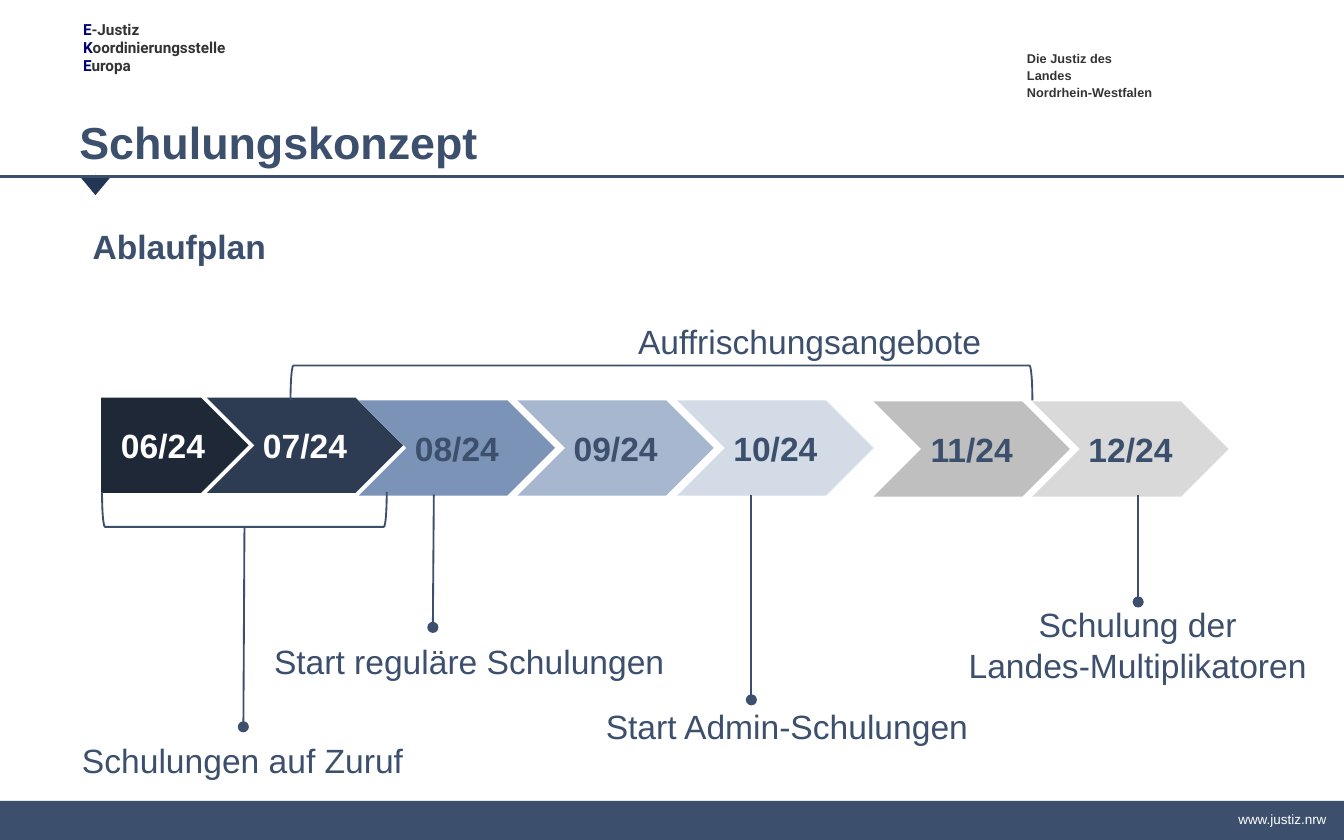
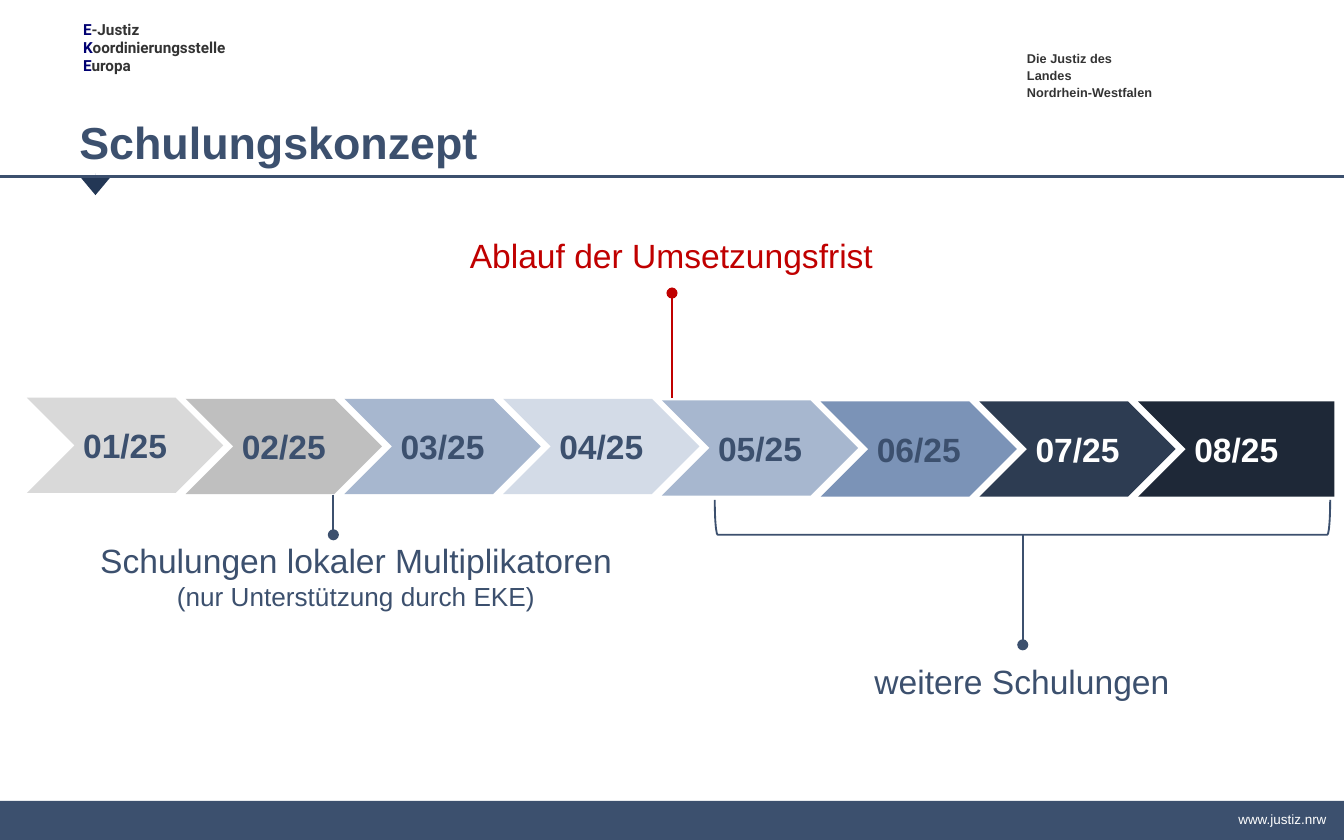
"""Build the two training schedule slides with their month chevrons and callouts."""
from dataclasses import dataclass

import lxml.etree
import pptx
import pptx.dml.color
import pptx.enum.shapes
import pptx.enum.text
import pptx.oxml.ns
import pptx.presentation
import pptx.shapes.base
import pptx.slide
import pptx.text.text
import pptx.util

Cm = pptx.util.Cm
Pt = pptx.util.Pt
Shape = pptx.enum.shapes.MSO_SHAPE
Align = pptx.enum.text.PP_ALIGN
Anchor = pptx.enum.text.MSO_ANCHOR
Slide = pptx.slide.Slide

COLORS = {
    "navy": "3C506E",
    "marker": "233755",
    "initial": "000071",
    "text": "333333",
    "white": "FFFFFF",
    "red": "C00000",
    "night": "1E2837",
    "dark": "2D3C52",
    "blue": "7B93B7",
    "light": "A7B7CF",
    "pale": "D3DBE7",
    "gray": "BFBFBF",
    "silver": "D9D9D9",
}
SLIDE_WIDTH, SLIDE_HEIGHT = 25.4, 15.88
MONTH_WIDTH, MONTH_HEIGHT, MONTH_STEP = 3.71, 1.8, 3.0
BRACKET_DEPTH = 0.66


@dataclass(frozen=True)
class Box:
    left: float
    top: float
    width: float
    height: float = 1.02

    def lengths(self) -> tuple:
        return Cm(self.left), Cm(self.top), Cm(self.width), Cm(self.height)


@dataclass(frozen=True)
class Style:
    size: float = 18
    color: str = "navy"
    bold: bool = False
    align: Align = Align.CENTER
    spacing: float | None = None
    font: str = "Arial"


@dataclass(frozen=True)
class Month:
    text: str
    left: float
    top: float
    color: str
    kind: str = "chevron"


@dataclass(frozen=True)
class Callout:
    start: tuple[float, float]
    end: tuple[float, float]
    color: str = "navy"


@dataclass(frozen=True)
class Bracket:
    left: float
    top: float
    span: float
    rotation: int


@dataclass(frozen=True)
class Label:
    box: Box
    lines: tuple[str, ...]
    styles: tuple[Style, ...] = (Style(),)


PLAIN_LEFT = (Style(align=Align.LEFT),)
HEADING = Style(bold=True, align=Align.JUSTIFY, spacing=16)

MONTHS_2024 = (
    Month("06/24", 1.91, 7.52, "night", "start"),
    Month("07/24", 3.91, 7.52, "dark"),
    Month("08/24", 6.78, 7.57, "blue"),
    Month("09/24", 9.78, 7.57, "light"),
    Month("10/24", 12.8, 7.57, "pale"),
    Month("11/24", 16.51, 7.59, "gray"),
    Month("12/24", 19.51, 7.59, "silver"),
)
ROW_2025 = (
    (7.52, "silver"), (7.54, "gray"), (7.54, "light"), (7.54, "pale"),
    (7.57, "light"), (7.59, "blue"), (7.59, "dark"), (7.59, "night"),
)
MONTHS_2025 = tuple(
    Month(f"{number:02}/25", 0.51 + MONTH_STEP * (number - 1), top, color,
          "end" if number == len(ROW_2025) else "chevron")
    for number, (top, color) in enumerate(ROW_2025, start=1)
)
BRACKETS_2024 = (Bracket(1.93, 9.3, 5.38, 270), Bracket(5.49, 6.91, 14.02, 90))
BRACKETS_2025 = (Bracket(13.51, 9.45, 11.63, 270),)
CALLOUTS_2024 = (
    Callout((8.2, 9.35), (8.18, 11.86)),
    Callout((4.62, 9.96), (4.6, 13.74)),
    Callout((14.2, 9.35), (14.2, 13.23)),
    Callout((21.51, 9.35), (21.51, 11.38)),
)
CALLOUTS_2025 = (
    Callout((12.7, 7.52), (12.7, 5.54), "red"),
    Callout((6.3, 9.35), (6.3, 10.11)),
    Callout((19.33, 10.11), (19.33, 12.19)),
)
LABELS_2024 = (
    Label(Box(1.5, 4.34, 12.7, 0.84), ("Ablaufplan",), (HEADING,)),
    Label(Box(1.3, 13.87, 6.63), ("Schulungen auf Zuruf",), PLAIN_LEFT),
    Label(Box(4.93, 11.99, 7.95), ("Start reguläre Schulungen",), PLAIN_LEFT),
    Label(Box(11.2, 13.23, 7.42), ("Start Admin-Schulungen",), PLAIN_LEFT),
    Label(Box(11.81, 5.94, 7.24), ("Auffrischungsangebote",), PLAIN_LEFT),
    Label(Box(17.93, 11.3, 7.14, 1.8), ("Schulung der", "Landes-Multiplikatoren"),
          (Style(), Style())),
)
LABELS_2025 = (
    Label(Box(1.6, 10.08, 10.26, 1.63),
          ("Schulungen lokaler Multiplikatoren", "(nur Unterstützung durch EKE)"),
          (Style(), Style(size=14))),
    Label(Box(8.59, 4.32, 8.2), ("Ablauf der Umsetzungsfrist",), (Style(color="red"),)),
    Label(Box(16.18, 12.37, 6.27), ("weitere Schulungen",)),
)


def rgb(name: str) -> pptx.dml.color.RGBColor:
    return pptx.dml.color.RGBColor.from_string(COLORS[name])


def format_paragraph(paragraph: pptx.text.text._Paragraph, style: Style) -> None:
    paragraph.alignment = style.align
    if style.spacing:
        paragraph.line_spacing = Pt(style.spacing)
    paragraph.font.name = style.font
    paragraph.font.size = Pt(style.size)
    paragraph.font.bold = style.bold
    paragraph.font.color.rgb = rgb(style.color)


def set_frame(frame: pptx.text.text.TextFrame, anchor: Anchor, wrap: bool = True) -> None:
    frame.margin_left = frame.margin_top = frame.margin_right = frame.margin_bottom = 0
    frame.vertical_anchor = anchor
    frame.word_wrap = wrap


def fill_shape(shape: pptx.shapes.base.BaseShape, color: str) -> None:
    shape.shadow.inherit = False
    shape.fill.solid()
    shape.fill.fore_color.rgb = rgb(color)
    shape.line.fill.background()


def add_label(slide: Slide, label: Label) -> pptx.text.text.TextFrame:
    frame = slide.shapes.add_textbox(*label.box.lengths()).text_frame
    frame.word_wrap = label.styles[0].align == Align.JUSTIFY
    frame.text = "\n".join(label.lines)
    for paragraph, style in zip(frame.paragraphs, label.styles):
        format_paragraph(paragraph, style)
    return frame


def add_line(slide: Slide, line: Callout, width: float = 1, dot: bool = True) -> None:
    connector = slide.shapes.add_connector(
        pptx.enum.shapes.MSO_CONNECTOR.STRAIGHT,
        *(Cm(value) for value in line.start + line.end))
    connector.line.color.rgb = rgb(line.color)
    connector.line.width = Pt(width)
    properties = connector.element.spPr
    qn = pptx.oxml.ns.qn
    if dot:
        lxml.etree.SubElement(properties.find(qn("a:ln")), qn("a:tailEnd"), type="oval")
    lxml.etree.SubElement(properties, qn("a:effectLst"))


def add_bracket(slide: Slide, bracket: Bracket) -> None:
    left = bracket.left + (bracket.span - BRACKET_DEPTH) / 2
    top = bracket.top - (bracket.span - BRACKET_DEPTH) / 2
    shape = slide.shapes.add_shape(
        Shape.LEFT_BRACKET, *Box(left, top, BRACKET_DEPTH, bracket.span).lengths())
    shape.rotation = bracket.rotation
    shape.shadow.inherit = False
    shape.fill.background()
    shape.line.color.rgb = rgb("navy")
    shape.line.width = Pt(1)


def add_month(slide: Slide, month: Month) -> None:
    if month.kind == "end":
        right, bottom = month.left + MONTH_WIDTH, month.top + MONTH_HEIGHT
        corners = ((right, month.top), (right, bottom), (month.left, bottom),
                   (month.left + MONTH_HEIGHT / 2, month.top + MONTH_HEIGHT / 2))
        builder = slide.shapes.build_freeform(Cm(month.left), Cm(month.top))
        builder.add_line_segments([(Cm(x), Cm(y)) for x, y in corners])
        shape = builder.convert_to_shape()
    else:
        start = month.kind == "start"
        box = Box(month.left, month.top, 2.79 if start else MONTH_WIDTH, MONTH_HEIGHT)
        shape = slide.shapes.add_shape(
            Shape.PENTAGON if start else Shape.CHEVRON, *box.lengths())
    fill_shape(shape, month.color)
    set_frame(shape.text_frame, Anchor.MIDDLE)
    paragraph = shape.text_frame.paragraphs[0]
    paragraph.text = month.text
    text_color = "white" if month.color in ("night", "dark") else "navy"
    format_paragraph(paragraph, Style(color=text_color, bold=True))


def add_header(slide: Slide) -> None:
    state = slide.shapes.add_textbox(*Box(19.41, 0.94, 2.51, 0.64).lengths()).text_frame
    set_frame(state, Anchor.TOP, wrap=False)
    state.paragraphs[0].text = "Die Justiz des Landes\vNordrhein-Westfalen"
    format_paragraph(state.paragraphs[0], Style(6.8, "text", True, Align.LEFT, 9))

    marker = slide.shapes.add_shape(Shape.DOWN_ARROW, *Box(1.5, 3.28, 0.61, 0.41).lengths())
    marker.adjustments[0], marker.adjustments[1] = 0, 0.89
    fill_shape(marker, "marker")
    add_line(slide, Callout((0, 3.33), (SLIDE_WIDTH, 3.33)), 1.5, dot=False)

    names = ("E-Justiz", "Koordinierungsstelle", "Europa")
    style = Style(8.2, "text", True, Align.LEFT, font="Roboto")
    frame = add_label(slide, Label(Box(1.32, 0.25, 4.75, 1.32), names, (style,) * 3))
    for paragraph, name in zip(frame.paragraphs, names):
        paragraph.runs[0].text = name[0]
        paragraph.runs[0].font.color.rgb = rgb("initial")
        paragraph.add_run().text = name[1:]


def add_footer(slide: Slide) -> None:
    band = slide.shapes.add_shape(
        Shape.RECTANGLE, *Box(0, 15.14, SLIDE_WIDTH, SLIDE_HEIGHT - 15.14).lengths())
    fill_shape(band, "navy")
    address = Label(Box(22.73, 15.21, 2.59, 0.56), ("www.justiz.nrw",),
                    (Style(7.2, "white", align=Align.RIGHT),))
    add_label(slide, address).vertical_anchor = Anchor.MIDDLE


def add_schedule(
    presentation: pptx.presentation.Presentation,
    months: tuple[Month, ...],
    brackets: tuple[Bracket, ...],
    callouts: tuple[Callout, ...],
    labels: tuple[Label, ...],
) -> None:
    slide = presentation.slides.add_slide(presentation.slide_layouts.get_by_name("Title Only"))
    add_header(slide)
    add_footer(slide)
    title = slide.shapes.title
    title.left, title.top, title.width, title.height = Box(1.5, 1.91, 20.7, 1.27).lengths()
    set_frame(title.text_frame, Anchor.BOTTOM)
    title.text_frame.auto_size = pptx.enum.text.MSO_AUTO_SIZE.NONE
    title.text_frame.text = "Schulungskonzept"
    format_paragraph(title.text_frame.paragraphs[0], Style(24, "navy", True, Align.LEFT, 12))
    for draw, items in ((add_month, months), (add_bracket, brackets),
                        (add_line, callouts), (add_label, labels)):
        for item in items:
            draw(slide, item)


def main() -> None:
    presentation = pptx.Presentation()
    presentation.slide_width, presentation.slide_height = Cm(SLIDE_WIDTH), Cm(SLIDE_HEIGHT)
    add_schedule(presentation, MONTHS_2024, BRACKETS_2024, CALLOUTS_2024, LABELS_2024)
    add_schedule(presentation, MONTHS_2025, BRACKETS_2025, CALLOUTS_2025, LABELS_2025)
    presentation.save("out.pptx")


if __name__ == "__main__":
    main()
